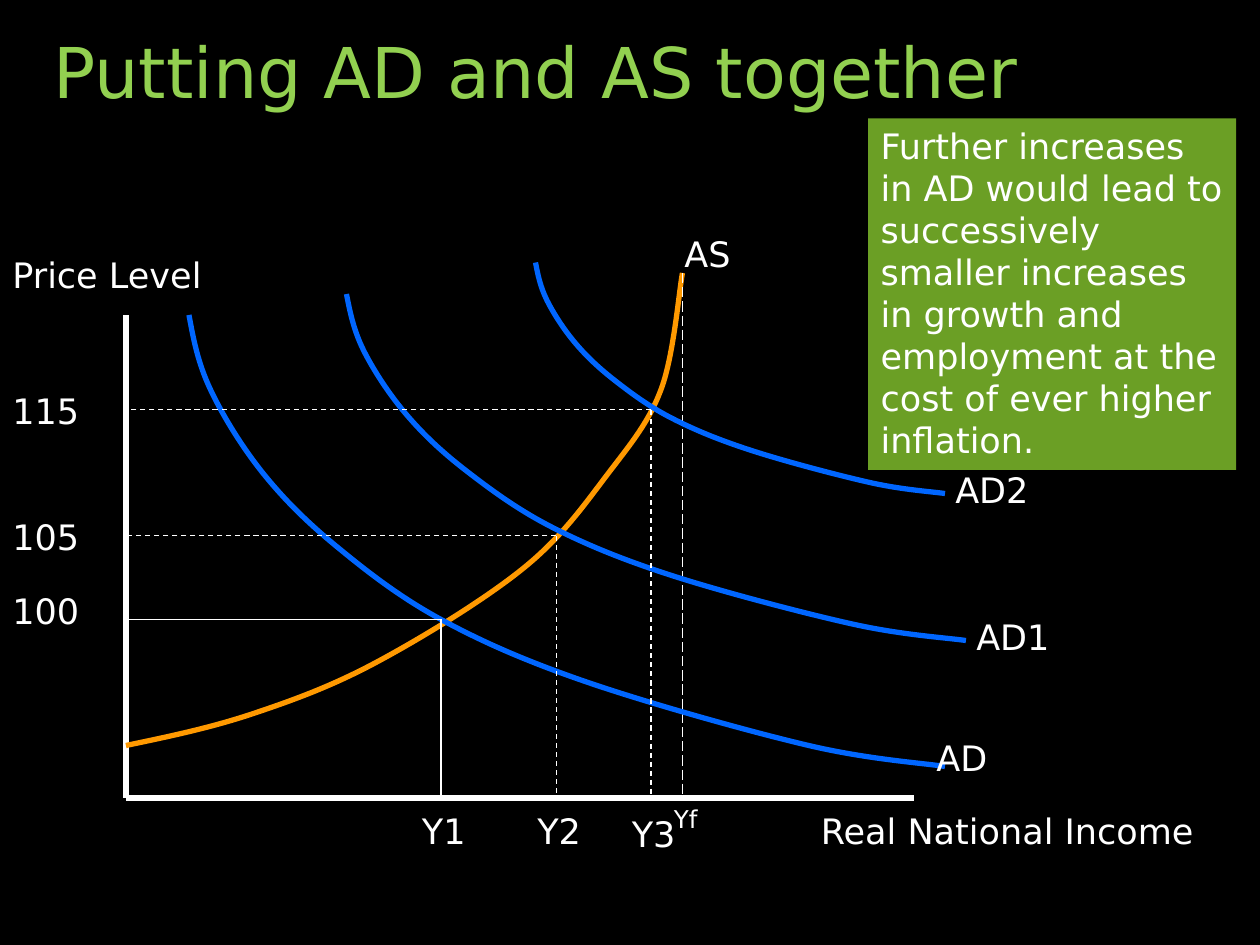
from lxml.etree import SubElement
from pptx import Presentation
from pptx.dml.color import RGBColor
from pptx.enum.dml import MSO_LINE
from pptx.enum.shapes import MSO_CONNECTOR, MSO_SHAPE
from pptx.enum.text import MSO_ANCHOR, MSO_AUTO_SIZE, PP_ALIGN
from pptx.oxml.ns import qn
from pptx.util import Inches, Pt

COLORS = {"back": "000000", "title": "92D050", "text": "FFFFFF", "axis": "FFFFFF",
          "supply": "FF9900", "demand": "0066FF", "callout": "6B9F25"}
FONT = "DejaVu Sans"
WIDTH, HEIGHT = Inches(10), Inches(7.5)
COLS, ROWS = 75, 46

SUPPLY = [(0, 41), (12, 38), (24, 33), (38, 24), (46, 15), (51, 7), (53, -4)]
DEMAND = [(0, 0), (2, 7), (7, 15), (14, 22), (24, 29), (38, 35), (59, 41), (72, 43)]
DEMAND_BOXES = [(6, 0, 72, 43), (21, -2, 59, 33), (39, -5, 39, 22)]
EQUILIBRIA = [(30, 29, None), (41, 21, MSO_LINE.DASH), (50, 9, MSO_LINE.DASH)]
LABELS = [
    ("Price Level", -12, -6.45, 20.5, 20), ("Real National Income", 65, 46.5, 38.2, 20),
    ("AS", 52, -8.45, 7.4, 20), ("AD", 76, 39.55, 8, 20),
    ("AD1", 79.8, 28.05, 9.6, 20), ("AD2", 77.8, 14.05, 9.6, 20),
    ("100", -12, 25.55, 8.9, 20), ("105", -12, 18.55, 8.9, 20), ("115", -12, 6.55, 8.9, 20),
    ("Y1", 27, 46.5, 6.8, 20), ("Y2", 38, 46.5, 6.8, 20), ("Y3", 47, 46.8, 6.8, 20),
    ("Yf", 51, 46, 4.9, 14),
]


def rgb(name):
    """Return the named palette colour."""
    return RGBColor.from_string(COLORS[name])


def share(left, top, width, height):
    """Turn shares of the slide into a box of lengths."""
    return (int(left * WIDTH), int(top * HEIGHT), int(width * WIDTH), int(height * HEIGHT))


def write(tf, text, size, color):
    """Add one run to the first paragraph and return the paragraph."""
    p = tf.paragraphs[0]
    r = p.add_run()
    r.text = text
    r.font.name, r.font.size = FONT, Pt(size)
    r.font.color.rgb = rgb(color)
    return p


def add_line(slide, start, end, width, dash=None):
    """Draw a straight line in the axis colour."""
    cxn = slide.shapes.add_connector(MSO_CONNECTOR.STRAIGHT, *start, *end)
    cxn.line.color.rgb, cxn.line.width = rgb("axis"), Pt(width)
    if dash:
        cxn.line.dash_style = dash
    SubElement(cxn._element.spPr, qn("a:effectLst"))


def smooth(sp):
    """Turn the straight segments of a freeform into cubic curves."""
    root = sp._element
    pts = [(int(pt.get("x")), int(pt.get("y"))) for pt in root.iter(qn("a:pt"))]
    last = len(pts) - 1

    def control(i, sign):
        """Return the handle of a point, a sixth of the span of its neighbours."""
        before, after = pts[max(i - 1, 0)], pts[min(i + 1, last)]
        return tuple(p + sign * (b - a) / 6 for p, a, b in zip(pts[i], before, after))

    for i, seg in enumerate(list(root.iter(qn("a:lnTo")))):
        enter = control(i + 1, -1)
        leave = control(i, 1) if i else [(a + b) / 2 for a, b in zip(pts[0], enter)]
        seg.tag = qn("a:cubicBezTo")
        seg.remove(seg[0])
        for x, y in (leave, enter, pts[i + 1]):
            SubElement(seg, qn("a:pt"), x=str(round(x)), y=str(round(y)))


def add_curve(slide, points, color):
    """Draw a smooth open curve through the points."""
    builder = slide.shapes.build_freeform(*points[0])
    builder.add_line_segments(points[1:], close=False)
    sp = builder.convert_to_shape()
    sp.shadow.inherit = False
    sp.fill.background()
    sp.line.color.rgb, sp.line.width = rgb(color), Pt(3)
    smooth(sp)


def add_title(slide, box):
    """Write the slide title in its box."""
    tf = slide.shapes.add_textbox(*box).text_frame
    tf.word_wrap, tf.vertical_anchor = True, MSO_ANCHOR.MIDDLE
    write(tf, "Putting AD and AS together", 40, "title").alignment = PP_ALIGN.CENTER


def add_diagram(slide, box):
    """Draw axes, curves, guides and labels on a grid over the plot box."""
    left, top, width, height = box

    def at(col, row):
        """Return the slide position of a grid point."""
        return round(left + col * width / COLS), round(top + row * height / ROWS)

    add_line(slide, at(0, 0), at(0, ROWS), 3)
    add_line(slide, at(0, ROWS), at(COLS, ROWS), 3)
    add_curve(slide, [at(*p) for p in SUPPLY], "supply")
    add_line(slide, at(*SUPPLY[-1]), at(SUPPLY[-1][0], ROWS), 0.75, MSO_LINE.LONG_DASH)
    for col, row, cols, rows in DEMAND_BOXES:
        add_curve(slide, [at(col + x * cols / 72, row + y * rows / 43) for x, y in DEMAND],
                  "demand")
    for col, row, dash in EQUILIBRIA:
        add_line(slide, at(col, row), at(0, row), 0.75, dash)
        add_line(slide, at(col, row), at(col, ROWS), 0.75, dash)
    for text, col, row, cols, size in LABELS:
        tf = slide.shapes.add_textbox(*at(col, row), round(cols * width / COLS),
                                      round(size * 0.26 * height / ROWS)).text_frame
        tf.word_wrap, tf.auto_size = False, MSO_AUTO_SIZE.SHAPE_TO_FIT_TEXT
        write(tf, text, size, "text").alignment = PP_ALIGN.LEFT


def add_callout(slide, box):
    """Place the filled remark beside the curves."""
    sp = slide.shapes.add_shape(MSO_SHAPE.RECTANGLE, *box)
    sp.shadow.inherit = False
    sp.fill.solid()
    sp.fill.fore_color.rgb = rgb("callout")
    sp.line.fill.background()
    tf = sp.text_frame
    tf.word_wrap, tf.vertical_anchor = True, MSO_ANCHOR.TOP
    tf.auto_size = MSO_AUTO_SIZE.SHAPE_TO_FIT_TEXT
    p = write(tf, "Further increases in AD would lead to successively smaller increases in "
              "growth and employment at the cost of ever higher inflation.", 20, "text")
    p.alignment = PP_ALIGN.LEFT


def main():
    """Build the slide and save it."""
    prs = Presentation()
    prs.slide_width, prs.slide_height = WIDTH, HEIGHT
    slide = prs.slides.add_slide(prs.slide_layouts[6])
    slide.background.fill.solid()
    slide.background.fill.fore_color.rgb = rgb("back")
    add_title(slide, share(0, 0.02, 0.85, 0.11))
    add_diagram(slide, (Inches(1), Inches(2.5), WIDTH * COLS // 120, HEIGHT * ROWS // 90))
    add_callout(slide, (Inches(6.89), Inches(0.94), Inches(2.92), Inches(2.79)))
    prs.save("out.pptx")


if __name__ == "__main__":
    main()
